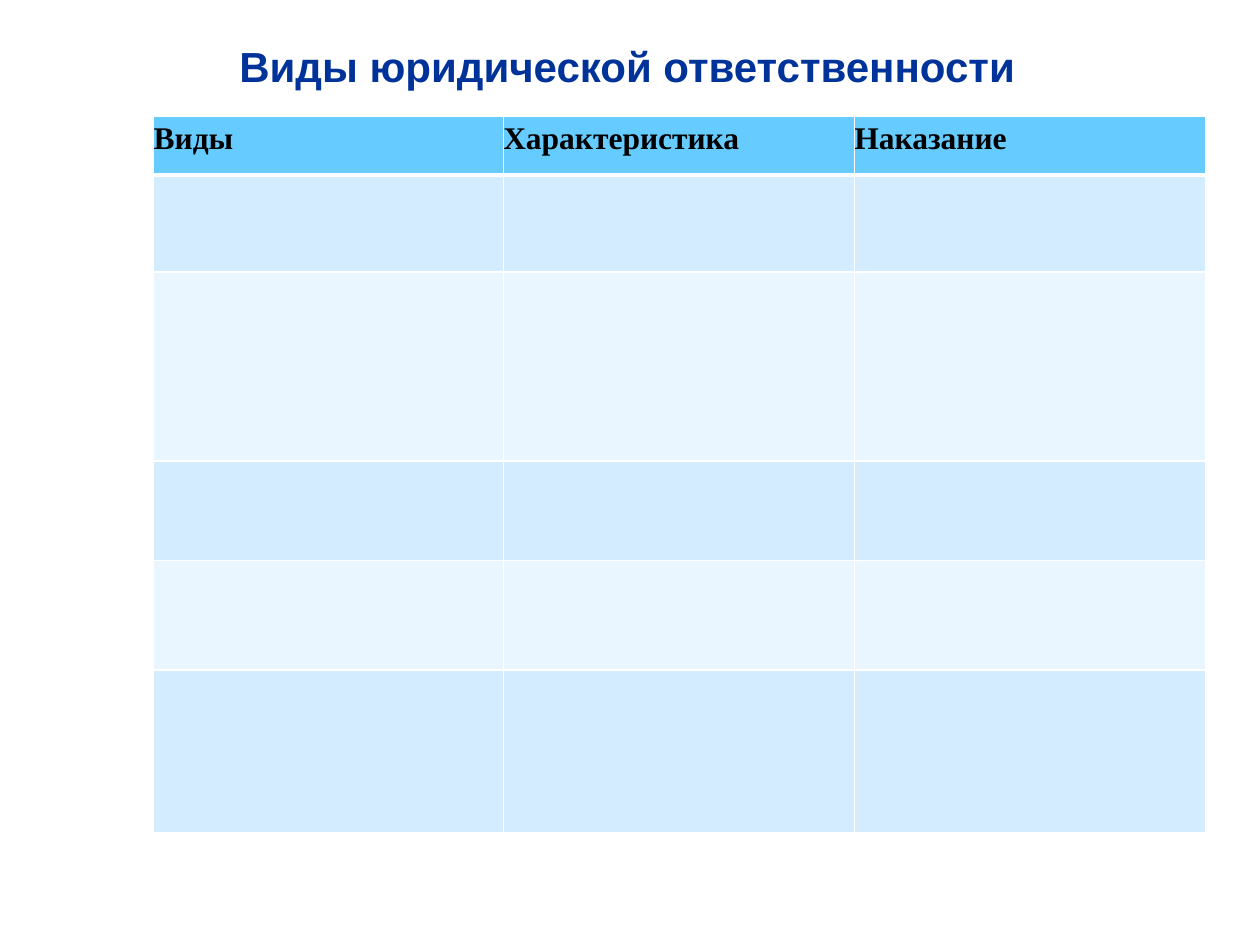
from dataclasses import dataclass

from lxml import etree
from pptx import Presentation
from pptx import util as u
from pptx.dml.color import RGBColor
from pptx.enum import text
from pptx.oxml.ns import qn


@dataclass(frozen=True)
class Theme:
    title_font: str = "Arial"
    table_font: str = "Times New Roman"
    title_size: float = 24
    header_size: float = 18
    title_color: str = "003399"
    header_color: str = "000000"
    header_fill: str = "66CCFF"
    band_fills: tuple = ("D3ECFF", "EAF6FF")
    border_color: str = "FFFFFF"
    thin: float = 1
    thick: float = 3


class SlideBuilder:
    def __init__(self, slide, theme):
        self.slide = slide
        self.theme = theme

    def run(self, paragraph, words, font, size, color):
        run = paragraph.add_run()
        run.text = words
        run.font.name = font
        run.font.size = u.Pt(size)
        run.font.bold = True
        run.font.color.rgb = RGBColor.from_string(color)

    def title(self, words, left, top, width, height, indent):
        shape = self.slide.shapes.add_textbox(*map(u.Pt, (left, top, width, height)))
        frame = shape.text_frame
        frame.word_wrap = True
        frame.vertical_anchor = text.MSO_ANCHOR.MIDDLE
        frame.margin_left = u.Pt(indent)
        paragraph = frame.paragraphs[0]
        paragraph.alignment = text.PP_ALIGN.CENTER
        theme = self.theme
        self.run(paragraph, words, theme.title_font, theme.title_size, theme.title_color)

    def borders(self, cell, top, bottom):
        properties = cell._tc.get_or_add_tcPr()
        widths = {"L": self.theme.thin, "R": self.theme.thin, "T": top, "B": bottom}
        for position, (side, width) in enumerate(widths.items()):
            line = etree.Element(qn(f"a:ln{side}"), w=str(u.Pt(width)))
            fill = etree.SubElement(line, qn("a:solidFill"))
            etree.SubElement(fill, qn("a:srgbClr"), val=self.theme.border_color)
            properties.insert(position, line)

    def header_text(self, cell, words):
        cell.margin_left = cell.margin_right = 0
        cell.margin_top = cell.margin_bottom = 0
        paragraph = cell.text_frame.paragraphs[0]
        paragraph.line_spacing = 1.15
        paragraph.space_after = u.Pt(6.2)
        theme = self.theme
        self.run(paragraph, words, theme.table_font, theme.header_size, theme.header_color)

    def table(self, headers, left, top, widths, heights):
        theme = self.theme
        size = (left, top, sum(widths), sum(heights))
        table = self.slide.shapes.add_table(
            len(heights), len(widths), *map(u.Pt, size)).table
        for column, width in zip(table.columns, widths):
            column.width = u.Pt(width)
        for index, (row, height) in enumerate(zip(table.rows, heights)):
            row.height = u.Pt(height)
            color = theme.band_fills[(index - 1) % 2] if index else theme.header_fill
            for cell in row.cells:
                cell.fill.solid()
                cell.fill.fore_color.rgb = RGBColor.from_string(color)
                self.borders(cell,
                             top=theme.thick if index == 1 else theme.thin,
                             bottom=theme.thick if index == 0 else theme.thin)
        for cell, words in zip(table.rows[0].cells, headers):
            self.header_text(cell, words)


def main():
    presentation = Presentation()
    presentation.slide_width = u.Pt(720)
    presentation.slide_height = u.Pt(540)
    slide = presentation.slides.add_slide(presentation.slide_layouts[6])
    builder = SlideBuilder(slide, Theme())
    builder.title("Виды юридической ответственности", 93.6, 15.1, 516.2, 45.4, indent=20.5)
    builder.table(
        ("Виды", "Характеристика", "Наказание"), 87.8, 66.2,
        widths=(199.8, 200.7, 200.7),
        heights=(33.8, 55.4, 108, 56.9, 62.6, 92.9))
    presentation.save("out.pptx")


if __name__ == "__main__":
    main()
